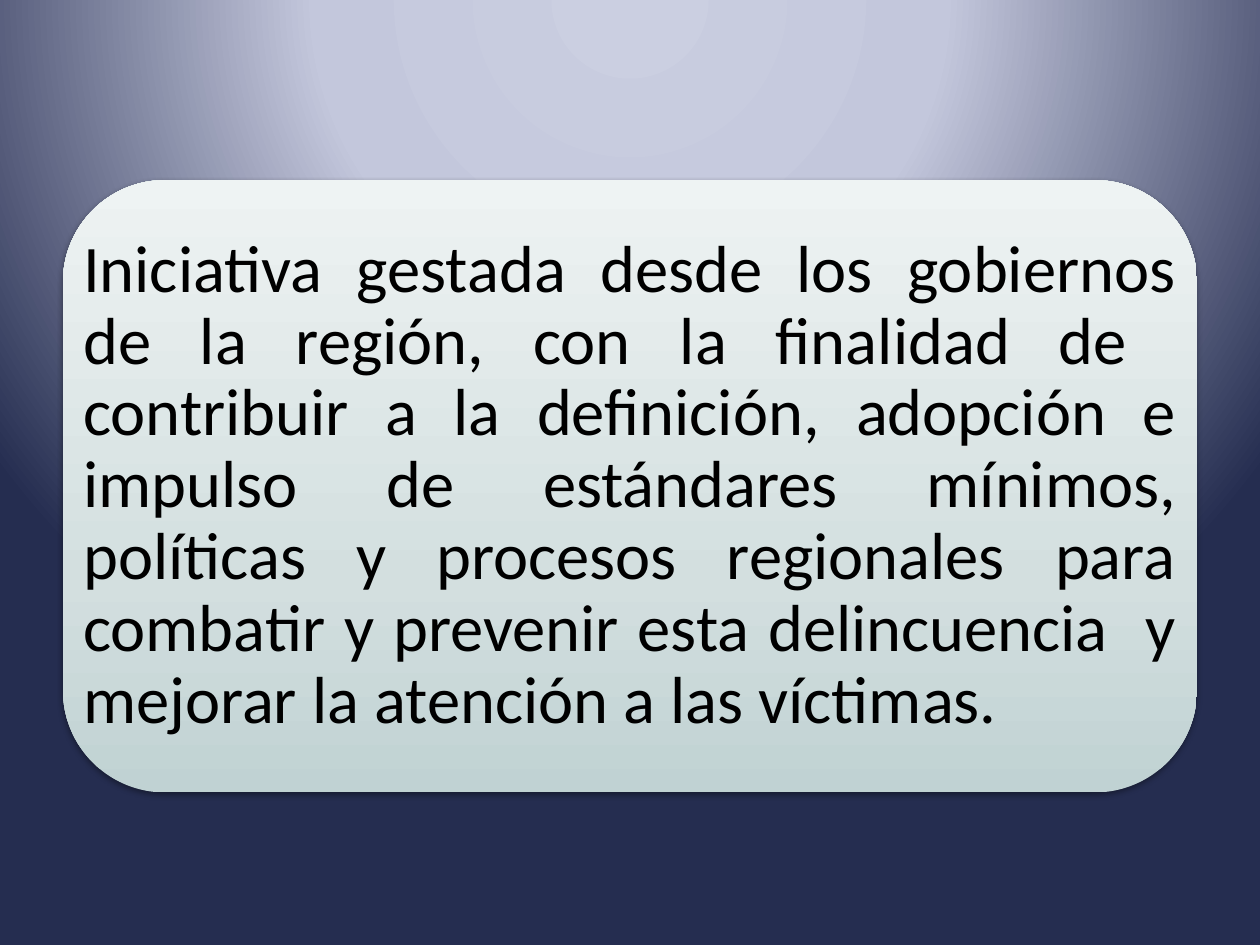
from dataclasses import dataclass

from lxml import etree
from pptx import Presentation
from pptx.dml.color import RGBColor
from pptx.enum.shapes import MSO_SHAPE
from pptx.enum.text import MSO_ANCHOR, PP_ALIGN
from pptx.oxml.ns import qn
from pptx.util import Inches, Pt

ROUNDED = MSO_SHAPE.ROUNDED_RECTANGLE
MIDDLE = MSO_ANCHOR.MIDDLE
JUSTIFY = PP_ALIGN.JUSTIFY
PERCENT = 1000
DEGREE = 60000

STATEMENT = (
    "Iniciativa gestada desde los gobiernos de la región, con la finalidad de  "
    "contribuir a la definición, adopción e impulso de estándares mínimos, "
    "políticas y procesos regionales para combatir y prevenir esta "
    "delincuencia  y mejorar la atención a las víctimas."
)


@dataclass(frozen=True)
class Theme:
    font: str = "Calibri"
    body_size: int = 38
    ink: str = "000000"
    shadow: str = "000000"
    backdrop: tuple = ((0, "CBCFE1"), (40, "C3C7DC"), (100, "252D50"))
    panel: tuple = ((0, "C0D2D3"), (35, "D3DFDF"), (100, "EEF3F3"))


def add_node(parent, tag, **attributes):
    values = {name: str(value) for name, value in attributes.items()}
    return etree.SubElement(parent, qn(tag), values)


def put_gradient(properties, stops):
    """Swap the solid fill for a gradient and return it."""
    gradient = etree.Element(qn("a:gradFill"), rotWithShape="1")
    stop_list = add_node(gradient, "a:gsLst")
    for position, color in stops:
        stop = add_node(stop_list, "a:gs", pos=position * PERCENT)
        add_node(stop, "a:srgbClr", val=color)
    properties.replace(properties.find(qn("a:solidFill")), gradient)
    return gradient


class SlideBuilder:
    def __init__(self, slide, theme):
        self.slide = slide
        self.theme = theme

    def background(self):
        self.slide.background.fill.solid()
        properties = self.slide.element.find(".//" + qn("p:bgPr"))
        gradient = put_gradient(properties, self.theme.backdrop)
        circle = add_node(gradient, "a:path", path="circle")
        add_node(circle, "a:fillToRect", l=50 * PERCENT, t=-80 * PERCENT,
                 r=50 * PERCENT, b=180 * PERCENT)

    def panel(self, area):
        panel = self.slide.shapes.add_shape(ROUNDED, *area)
        panel.line.fill.background()
        panel.fill.solid()
        properties = panel.element.spPr
        gradient = put_gradient(properties, self.theme.panel)
        add_node(gradient, "a:lin", ang=270 * DEGREE, scaled=0)

        # Soft shadow straight below
        panel.shadow.inherit = False
        shadow = add_node(properties.find(qn("a:effectLst")), "a:outerShdw",
                          blurRad=Pt(3.1), dist=Pt(1.6), dir=90 * DEGREE,
                          rotWithShape=0)
        color = add_node(shadow, "a:srgbClr", val=self.theme.shadow)
        add_node(color, "a:alpha", val=38 * PERCENT)

    def text(self, area, words):
        frame = self.slide.shapes.add_textbox(*area).text_frame
        frame.word_wrap = True
        frame.vertical_anchor = MIDDLE
        frame.margin_left = frame.margin_right = Inches(0.16)
        frame.margin_top = frame.margin_bottom = Inches(0.16)

        para = frame.paragraphs[0]
        para.alignment = JUSTIFY
        para.line_spacing = 0.9
        after = add_node(para._p.get_or_add_pPr(), "a:spcAft")
        add_node(after, "a:spcPct", val=35 * PERCENT)

        span = para.add_run()
        span.text = words
        span.font.name = self.theme.font
        span.font.size = Pt(self.theme.body_size)
        span.font.color.rgb = RGBColor.from_string(self.theme.ink)


def main():
    deck = Presentation()
    deck.slide_width, deck.slide_height = Inches(10), Inches(7.5)
    page = SlideBuilder(deck.slides.add_slide(deck.slide_layouts[6]), Theme())

    # Panel and its statement share one area
    area = [Inches(length) for length in (0.5, 1.43, 9, 4.86)]
    page.background()
    page.panel(area)
    page.text(area, STATEMENT)

    deck.save("out.pptx")


if __name__ == "__main__":
    main()
